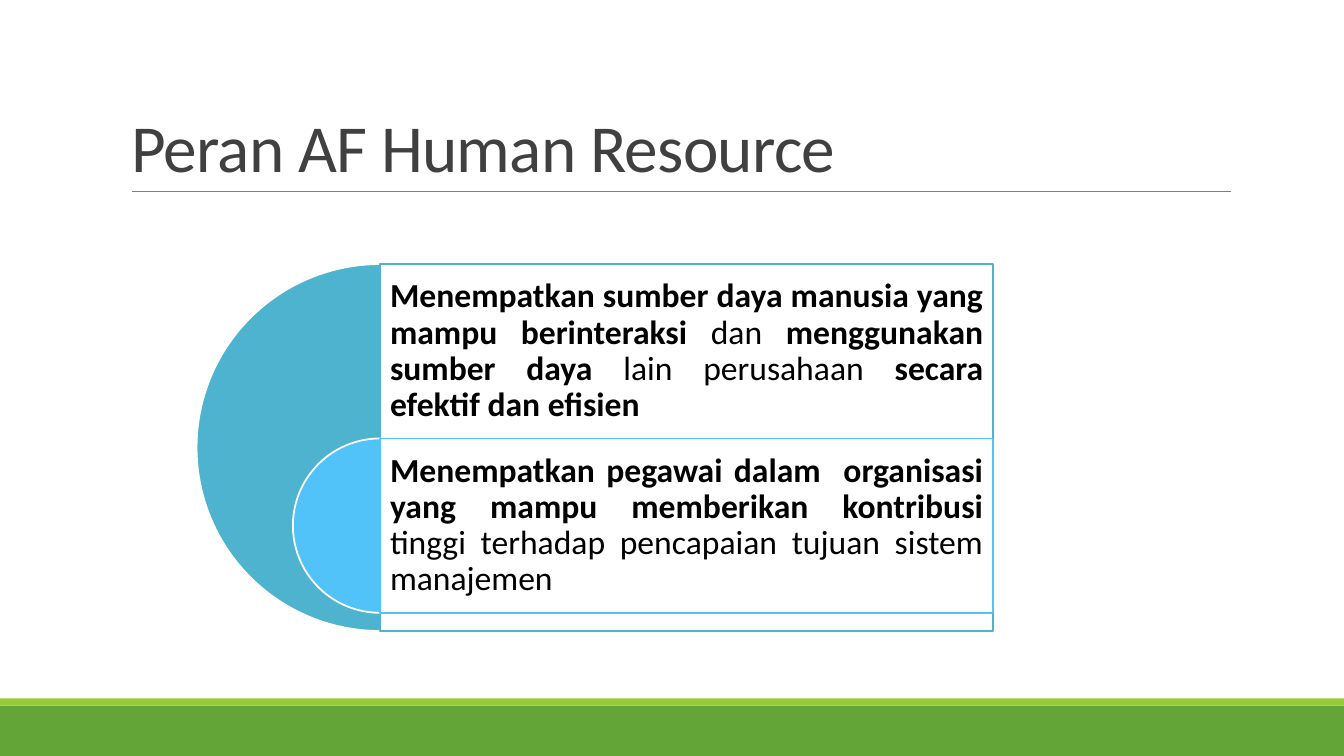
from lxml import etree
from pptx import Presentation
from pptx.dml.color import RGBColor
from pptx.enum.shapes import MSO_CONNECTOR, MSO_SHAPE
from pptx.enum.text import MSO_ANCHOR, PP_ALIGN
from pptx.oxml.ns import qn
from pptx.util import Inches, Pt

RECTANGLE, PIE = MSO_SHAPE.RECTANGLE, MSO_SHAPE.PIE
STRAIGHT = MSO_CONNECTOR.STRAIGHT
MIDDLE, BOTTOM = MSO_ANCHOR.MIDDLE, MSO_ANCHOR.BOTTOM
JUSTIFY, LEFT = PP_ALIGN.JUSTIFY, PP_ALIGN.LEFT

FONT = "Calibri"
COLORS = {
    "green": "63A537", "lime": "99CB38", "rule": "808080", "title": "404040",
    "teal": "4EB3CF", "sky": "51C3F9", "white": "FFFFFF", "black": "000000",
}
ROLES = [
    [("Menempatkan sumber daya manusia yang mampu berinteraksi ", True),
     ("dan ", False), ("menggunakan sumber daya", True),
     (" lain perusahaan ", False), ("secara efektif dan efisien ", True)],
    [("Menempatkan pegawai dalam  organisasi yang mampu memberikan kontribusi ", True),
     ("tinggi terhadap pencapaian tujuan sistem manajemen", False)],
]


def color(name):
    return RGBColor.from_string(COLORS[name])


def add_block(slide, kind, box, fill, line=None):
    block = slide.shapes.add_shape(kind, *map(Inches, box))
    block.shadow.inherit = False
    block.fill.solid()
    block.fill.fore_color.rgb = color(fill)
    if line:
        block.line.color.rgb = color(line)
        block.line.width = Pt(1.25)
    else:
        block.line.fill.background()
    return block


def style_run(run, size, name, bold=False):
    run.font.name = FONT
    run.font.size = Pt(size)
    run.font.bold = bold
    run.font.color.rgb = color(name)


def add_footer(slide, left, top, width, height):
    stripe = 0.07
    add_block(slide, RECTANGLE, (left, top + stripe, width, height - stripe), "green")
    add_block(slide, RECTANGLE, (left, top, width, stripe), "lime")


def add_heading(slide, left, top, width, height):
    title = slide.shapes.title
    title.left, title.top, title.width, title.height = map(
        Inches, (left, top, width, height))
    frame = title.text_frame
    frame.text = "Peran AF Human Resource"
    frame.word_wrap = True
    frame.vertical_anchor = BOTTOM
    heading = frame.paragraphs[0]
    heading.alignment = LEFT
    heading.line_spacing = 0.85
    style_run(heading.runs[0], 48, "title")
    heading.runs[0].font._element.set("spc", "-50")

    bottom = top + height
    rule = slide.shapes.add_connector(
        STRAIGHT, *map(Inches, (left + 0.11, bottom, left + width + 0.01, bottom)))
    rule.line.color.rgb = color("rule")
    rule.line.width = Pt(0.5)
    etree.SubElement(rule._element.spPr, qn("a:effectLst"))


def add_role_text(slide, box, phrases):
    role = slide.shapes.add_textbox(*map(Inches, box))
    frame = role.text_frame
    frame.word_wrap = True
    frame.vertical_anchor = MIDDLE
    frame.margin_left = frame.margin_right = Inches(0.1)
    frame.margin_top = frame.margin_bottom = Inches(0.1)
    paragraph = frame.paragraphs[0]
    paragraph.alignment = JUSTIFY
    paragraph.line_spacing = 0.9
    for phrase, bold in phrases:
        run = paragraph.add_run()
        run.text = phrase
        style_run(run, 24, "black", bold)


def add_roles(slide, left, top, width, height):
    row_height = 1.73
    panel_left = left + height / 2
    panel_width = width - height / 2
    levels = zip(ROLES, ("teal", "sky"), (height, row_height))
    for index, (phrases, accent, diameter) in enumerate(levels):
        row_top = top + index * row_height
        half_disc = add_block(
            slide, PIE, (panel_left - diameter / 2, row_top, diameter, diameter),
            accent, "white")
        half_disc.adjustments[0] = 54
        half_disc.adjustments[1] = 162
        panel = add_block(
            slide, RECTANGLE, (panel_left, row_top, panel_width, diameter),
            "white", accent)
        tint = panel._element.spPr.find(qn("a:solidFill"))[0]
        etree.SubElement(tint, qn("a:alpha"), val="90000")
        add_role_text(slide, (panel_left, row_top, panel_width, row_height), phrases)


def main():
    deck = Presentation()
    deck.slide_width, deck.slide_height = Inches(13.33), Inches(7.5)
    slide = deck.slides.add_slide(deck.slide_layouts[5])
    slide.background.fill.solid()
    slide.background.fill.fore_color.rgb = color("white")
    add_footer(slide, 0, 6.93, 13.33, 0.57)
    add_heading(slide, 1.2, 0.31, 11, 1.59)
    add_roles(slide, 1.95, 2.62, 7.9, 3.64)
    deck.save("out.pptx")


if __name__ == "__main__":
    main()
